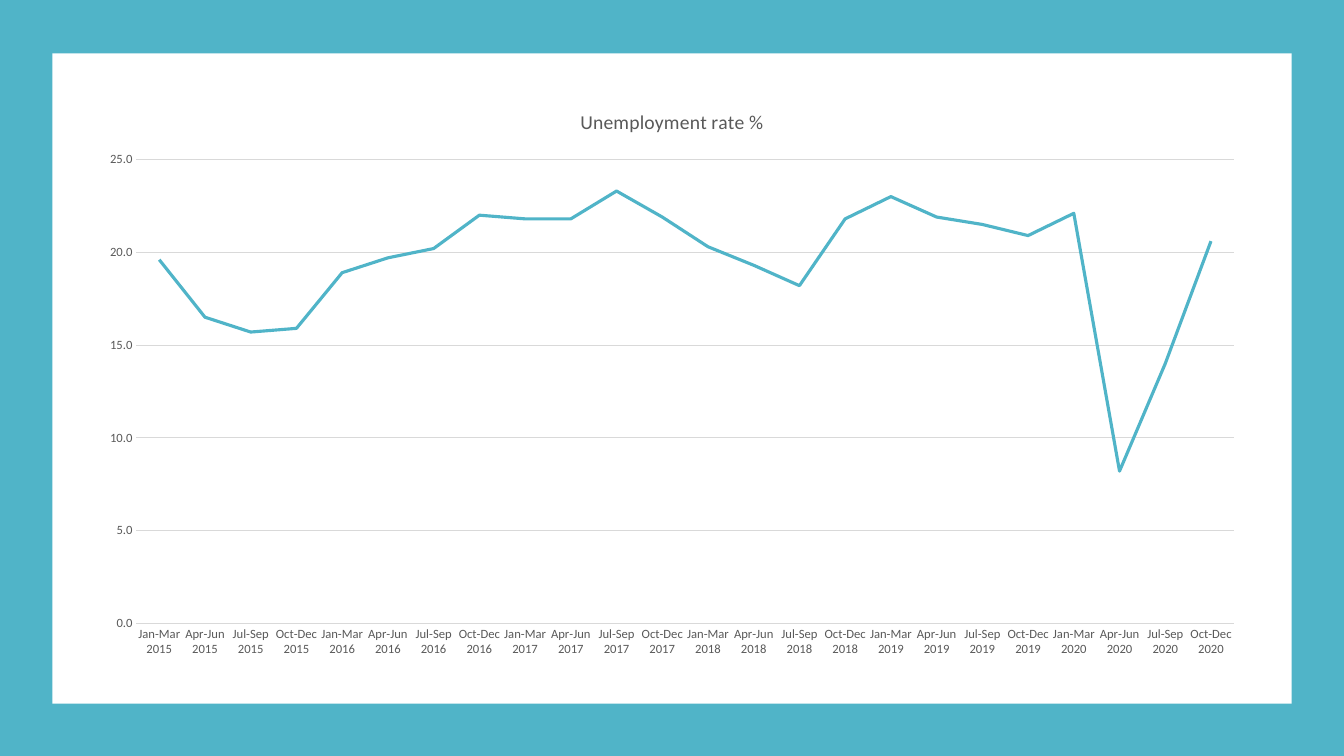
from pptx import Presentation
from pptx.chart.data import CategoryChartData
from pptx.dml.color import RGBColor
from pptx.enum.chart import XL_CHART_TYPE, XL_MARKER_STYLE, XL_TICK_MARK
from pptx.enum.shapes import MSO_SHAPE
from pptx.util import Inches, Pt

TEAL = RGBColor(0x50, 0xB4, 0xC8)
WHITE = RGBColor(0xFF, 0xFF, 0xFF)
GREY = RGBColor(0x59, 0x59, 0x59)
PALE = RGBColor(0xD9, 0xD9, 0xD9)
BLACK = RGBColor(0, 0, 0)
FONT = "Calibri"
WIDTH, HEIGHT = 13.33, 7.5

TITLE = "Unemployment rate %"
TERMS = ["Jan-Mar", "Apr-Jun", "Jul-Sep", "Oct-Dec"]
RATES = {
    2015: [19.6, 16.5, 15.7, 15.9],
    2016: [18.9, 19.7, 20.2, 22],
    2017: [21.8, 21.8, 23.3, 21.9],
    2018: [20.3, 19.3, 18.2, 21.8],
    2019: [23, 21.9, 21.5, 20.9],
    2020: [22.1, 8.2, 14, 20.6],
}


def set_font(font, size, color):
    font.name = FONT
    font.size = Pt(size)
    font.bold = False
    font.color.rgb = color


def set_line(line, color, width):
    line.color.rgb = color
    line.width = Pt(width)


def add_panel(slide, box, color):
    left, top, width, height = map(Inches, box)
    panel = slide.shapes.add_shape(MSO_SHAPE.RECTANGLE, left, top, width, height)
    panel.shadow.inherit = False
    panel.fill.solid()
    panel.fill.fore_color.rgb = color
    panel.line.fill.background()


def style_axes(chart):
    for axis in (chart.category_axis, chart.value_axis):
        axis.major_tick_mark = XL_TICK_MARK.NONE
        axis.minor_tick_mark = XL_TICK_MARK.NONE
        set_font(axis.tick_labels.font, 9, GREY)
    set_line(chart.category_axis.format.line, PALE, 0.75)

    scale = chart.value_axis
    scale.minimum_scale, scale.maximum_scale, scale.major_unit = 0, 25, 5
    scale.tick_labels.number_format = "0.0"
    scale.tick_labels.number_format_is_linked = False
    scale.format.line.fill.background()
    scale.has_major_gridlines = True
    set_line(scale.major_gridlines.format.line, PALE, 0.75)


def add_rates(slide, box):
    """Draw the line chart of quarterly rates."""
    data = CategoryChartData(number_format="0.0")
    data.categories = [f"{term} {year}" for year in RATES for term in TERMS]
    data.add_series(TITLE, [rate for rates in RATES.values() for rate in rates])
    frame = slide.shapes.add_chart(XL_CHART_TYPE.LINE, *map(Inches, box), data)
    chart = frame.chart
    set_font(chart.font, 10, BLACK)
    chart.has_legend = False

    chart.has_title = True
    chart.chart_title.include_in_layout = False
    run = chart.chart_title.text_frame.paragraphs[0].add_run()
    run.text = TITLE
    set_font(run.font, 14, GREY)

    style_axes(chart)
    plot = chart.plots[0]
    plot.vary_by_categories = False
    series = plot.series[0]
    series.smooth = False
    series.marker.style = XL_MARKER_STYLE.NONE
    set_line(series.format.line, TEAL, 2.25)


def build_slide(deck):
    slide = deck.slides.add_slide(deck.slide_layouts[6])
    add_panel(slide, (0, 0, WIDTH, HEIGHT), TEAL)
    add_panel(slide, (0.52, 0.53, 12.29, 6.45), WHITE)
    add_rates(slide, (0.86, 0.87, 11.61, 5.76))


def main():
    deck = Presentation()
    deck.slide_width = Inches(WIDTH)
    deck.slide_height = Inches(HEIGHT)
    build_slide(deck)
    deck.save("out.pptx")


if __name__ == "__main__":
    main()
